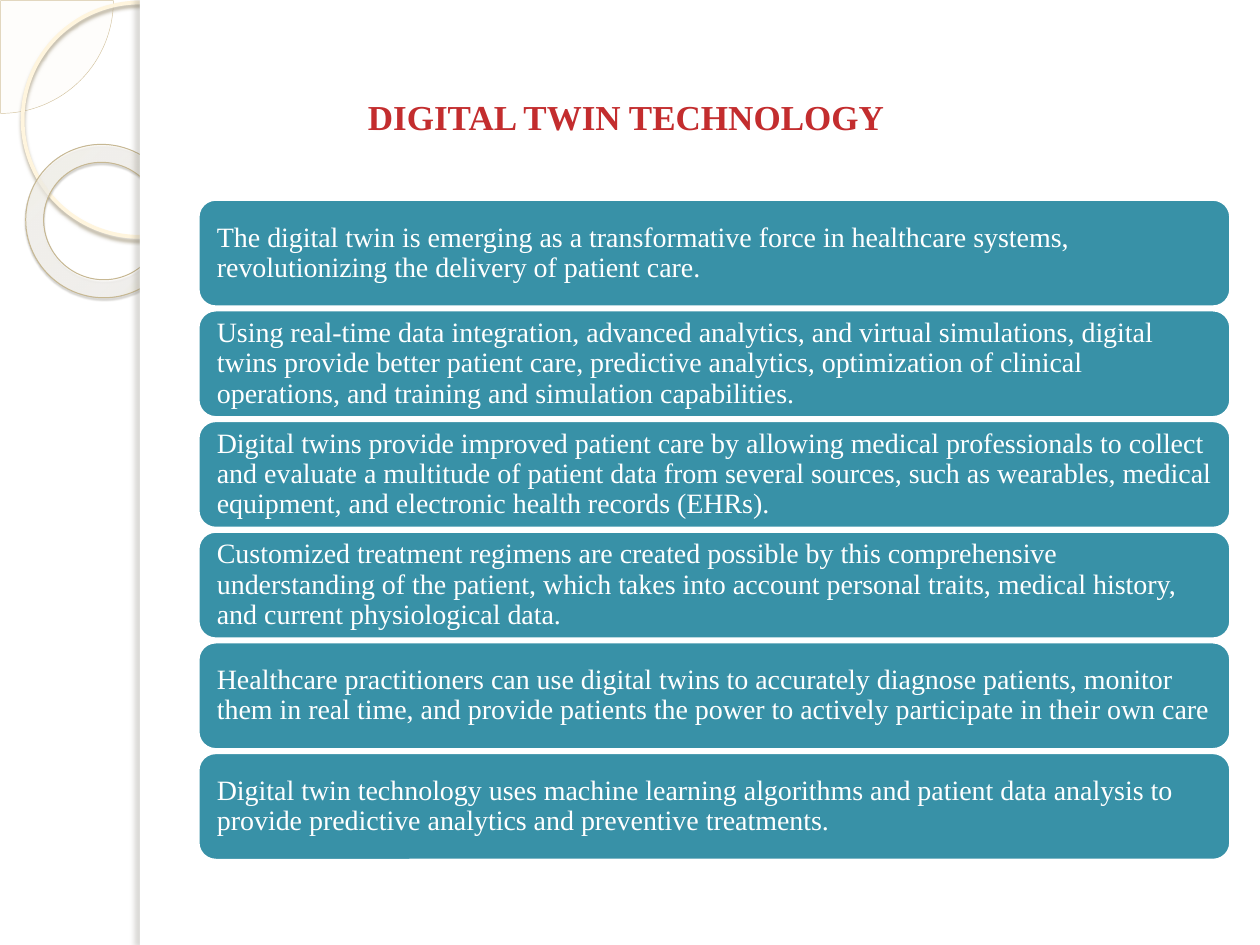
from pptx import Presentation
from pptx.dml.color import RGBColor
from pptx.enum.shapes import MSO_SHAPE
from pptx.enum.text import MSO_ANCHOR, PP_ALIGN
from pptx.oxml import parse_xml
from pptx.oxml.ns import nsdecls, qn
from pptx.util import Inches, Pt
from lxml.etree import SubElement

WHITE = RGBColor(0xFF, 0xFF, 0xFF)
TEAL = RGBColor(0x38, 0x91, 0xA7)
RED = RGBColor(0xC3, 0x2D, 0x2E)
IVORY = RGBColor(0xFE, 0xFA, 0xF4)
SAND = RGBColor(0xD3, 0xC3, 0x9F)
CREAM = RGBColor(0xFF, 0xF5, 0xDE)
KHAKI = RGBColor(0xC7, 0xB8, 0x93)
TAUPE = RGBColor(0xB0, 0xA6, 0x8F)
BROWN = RGBColor(0x5A, 0x54, 0x44)
GREY = RGBColor(0x73, 0x6F, 0x63)
FONT = "Times New Roman"

POINTS = [
    "The digital twin is emerging as a transformative force in healthcare systems, "
    "revolutionizing the delivery of patient care.",
    "Using real-time data integration, advanced analytics, and virtual simulations, "
    "digital twins provide better patient care, predictive analytics, optimization of "
    "clinical operations, and training and simulation capabilities.",
    "Digital twins provide improved patient care by allowing medical professionals to "
    "collect and evaluate a multitude of patient data from several sources, such as "
    "wearables, medical equipment, and electronic health records (EHRs).",
    "Customized treatment regimens are created possible by this comprehensive "
    "understanding of the patient, which takes into account personal traits, medical "
    "history, and current physiological data.",
    "Healthcare practitioners can use digital twins to accurately diagnose patients, "
    "monitor them in real time, and provide patients the power to actively participate "
    "in their own care",
    "Digital twin technology uses machine learning algorithms and patient data analysis "
    "to provide predictive analytics and preventive treatments.",
]


def add_form(slide, kind, box, fill=None, line=None, width=0):
    form = slide.shapes.add_shape(kind, *(Inches(v) for v in box))
    form.shadow.inherit = False
    if fill is None:
        form.fill.background()
    else:
        form.fill.solid()
        form.fill.fore_color.rgb = fill
    if line is None:
        form.line.fill.background()
    else:
        form.line.color.rgb = line
        form.line.width = Pt(width)
    return form


def add_alpha(color, percent):
    SubElement(color, qn("a:alpha"), val=str(percent * 1000))


def cast_shadow(form, color, alpha, blur, dist, angle):
    effects = form._element.spPr.find(qn("a:effectLst"))
    shade = SubElement(effects, qn("a:outerShdw"), blurRad=str(Pt(blur)),
                       dist=str(Pt(dist)), dir=str(angle * 60000),
                       algn="tl", rotWithShape="0")
    add_alpha(SubElement(shade, qn("a:srgbClr"), val=str(color)), alpha)


def fill_glow(form, stops):
    """Fill with a circular gradient of (position, colour, opacity) stops."""
    marks = "".join(
        f'<a:gs pos="{pos * 1000}"><a:srgbClr val="{color}">'
        f'<a:alpha val="{alpha * 1000}"/></a:srgbClr></a:gs>'
        for pos, color, alpha in stops)
    glow = parse_xml(
        f'<a:gradFill {nsdecls("a")} rotWithShape="1"><a:gsLst>{marks}</a:gsLst>'
        '<a:path path="circle"><a:fillToRect l="-408000" t="-50000" '
        'r="508000" b="150000"/></a:path></a:gradFill>')
    props = form._element.spPr
    props.replace(props.find(qn("a:noFill")), glow)


def draw_rings(slide, left, top):
    """Draw the corner ornament around the given corner point."""
    pie = add_form(slide, MSO_SHAPE.PIE, (left - 0.89, top - 0.89, 1.79, 1.79),
                   IVORY, SAND, 0.25)
    pie.adjustments[0], pie.adjustments[1] = 0, 54
    add_alpha(pie._element.spPr.find(qn("a:solidFill"))[0], 33)

    hoop = add_form(slide, MSO_SHAPE.OVAL, (left + 0.18, top + 0.02, 1.86, 1.86),
                    line=CREAM, width=2.15)
    cast_shadow(hoop, TAUPE, 85, 2, 2, 90)

    ring = add_form(slide, MSO_SHAPE.DONUT, (left + 0.2, top + 1.15, 1.23, 1.21),
                    line=KHAKI, width=0.58)
    ring.adjustments[0] = 0.118
    ring.rotation = 38.6
    fill_glow(ring, [(0, "FFFCF6", 70), (70, "FFFEFB", 55), (100, "F0D28E", 60)])
    cast_shadow(ring, BROWN, 35, 1, 1.2, 75)


def draw_page(slide, left, top, width, height):
    add_form(slide, MSO_SHAPE.RECTANGLE, (left, top, width, height), WHITE)
    edge = add_form(slide, MSO_SHAPE.RECTANGLE, (left, top, 0.08, height), WHITE)
    cast_shadow(edge, GREY, 25, 3, 3, 180)


def set_text(frame, text, size, color, bold=False):
    frame.word_wrap = True
    frame.vertical_anchor = MSO_ANCHOR.MIDDLE
    frame.text = text
    para = frame.paragraphs[0]
    para.alignment = PP_ALIGN.LEFT
    font = para.runs[0].font
    font.name, font.size, font.bold = FONT, Pt(size), bold
    font.color.rgb = color
    return para


def draw_title(slide, left, top, width, height):
    box = slide.shapes.add_textbox(*(Inches(v) for v in (left, top, width, height)))
    box.text_frame.margin_left = Inches(1.35)
    set_text(box.text_frame, "DIGITAL TWIN TECHNOLOGY", 20, RED, True)


def draw_cards(slide, left, top, width, height, gap=0.02):
    """Stack one card for each point, sharing the height evenly."""
    step = (height + gap) / len(POINTS)
    for i, text in enumerate(POINTS):
        card = add_form(slide, MSO_SHAPE.ROUNDED_RECTANGLE,
                        (left, top + i * step, width, step - gap), TEAL, WHITE, 2)
        frame = card.text_frame
        frame.margin_left = frame.margin_right = Inches(0.11)
        frame.margin_top = frame.margin_bottom = Inches(0.07)
        set_text(frame, text, 16, WHITE).line_spacing = 0.9


def main():
    deck = Presentation()
    deck.slide_width, deck.slide_height = Inches(10), Inches(7.5)
    slide = deck.slides.add_slide(deck.slide_layouts[6])
    draw_rings(slide, 0, 0)
    draw_page(slide, 1.11, 0, 8.89, 7.5)
    draw_title(slide, 1.57, 0.3, 8.2, 1.25)
    draw_cards(slide, 1.57, 1.58, 8.2, 5.25)
    deck.save("out.pptx")


if __name__ == "__main__":
    main()
